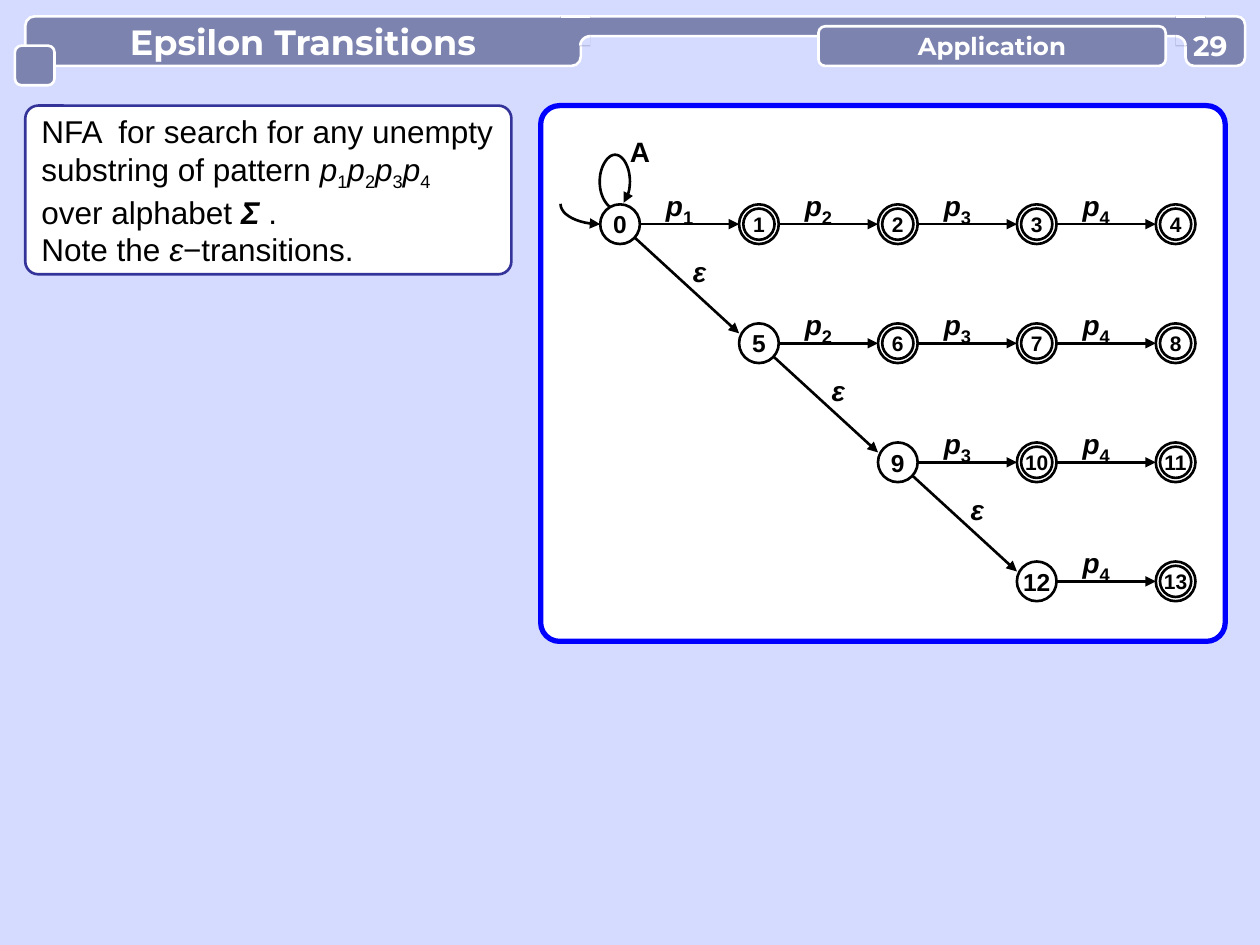
from typing import NamedTuple

from lxml.etree import SubElement
from pptx import Presentation
from pptx.dml.color import RGBColor as Rgb
from pptx.enum.shapes import MSO_CONNECTOR as Link, MSO_SHAPE as Kind
from pptx.enum.text import MSO_ANCHOR as Anchor, PP_ALIGN as Align
from pptx.oxml.ns import qn
from pptx.util import Cm, Pt

HUES = {"page": "D5DAFF", "bar": "7D83AF", "white": "FFFFFF", "black": "000000",
        "navy": "333399", "blue": "0000FF"}


class Run(NamedTuple):
    text: str
    bold: bool = False
    ital: bool = False
    sub: bool = False
    size: float | None = None


class Font(NamedTuple):
    name: str
    size: float
    hue: str
    bold: bool = True


class Box(NamedTuple):
    left: float
    top: float
    width: float
    height: float


class Point(NamedTuple):
    x: float
    y: float


HEAD = Font("Montserrat", 20, "white")
TAB = Font("Montserrat", 14, "white")
PAGE = Font("Montserrat", 16, "white")
BODY = Font("Arial", 18, "black", False)
MARK = Font("Arial", 16, "black")
STATE = Font("Arial", 14, "black")
FINAL = Font("Arial", 12, "black")

# State grid, in centimetres
ORIGIN = Point(12.5, 4.52)
STEP = Point(2.8, 2.4)
COUNT = 4
OUTER, INNER = 0.8, 0.63

deck = Presentation()
deck.slide_width, deck.slide_height = Cm(25.4), Cm(19.05)
slide = deck.slides.add_slide(deck.slide_layouts[6])
slide.background.fill.solid()
slide.background.fill.fore_color.rgb = Rgb.from_string(HUES["page"])
shapes = slide.shapes


def paint(shape, fill: str | None, line: str | None, width: float = 1.5) -> None:
    shape.shadow.inherit = False
    if fill:
        shape.fill.solid()
        shape.fill.fore_color.rgb = Rgb.from_string(HUES[fill])
    else:
        shape.fill.background()
    if line:
        shape.line.color.rgb = Rgb.from_string(HUES[line])
        shape.line.width = Pt(width)
    else:
        shape.line.fill.background()


def draw(kind: Kind, box: Box, fill: str | None, line: str | None = None,
         width: float = 1.5, curve: float | None = None):
    shape = shapes.add_shape(kind, *map(Cm, box))
    paint(shape, fill, line, width)
    if curve is not None:
        shape.adjustments[0] = curve
    return shape


def write(shape, lines: list[list[Run]], font: Font, align: Align = Align.CENTER,
          anchor: Anchor = Anchor.MIDDLE, tight: bool = False) -> None:
    frame = shape.text_frame
    frame.word_wrap = tight
    frame.vertical_anchor = anchor
    if tight:
        frame.margin_left = frame.margin_right = 0
        frame.margin_top = frame.margin_bottom = 0
    for i, runs in enumerate(lines):
        para = frame.add_paragraph() if i else frame.paragraphs[0]
        para.alignment = align
        para.font.name, para.font.size = font.name, Pt(font.size)
        para.font.bold = font.bold
        para.font.color.rgb = Rgb.from_string(HUES[font.hue])
        for part in runs:
            run = para.add_run()
            run.text = part.text
            if part.bold:
                run.font.bold = True
            if part.ital:
                run.font.italic = True
            if part.size:
                run.font.size = Pt(part.size)
            if part.sub:
                run.font._element.set("baseline", "-25000")


def link(start: Point, end: Point, hue: str = "black", arrow: bool = True) -> None:
    line = shapes.add_connector(Link.STRAIGHT, *map(Cm, (*start, *end)))
    line.line.color.rgb = Rgb.from_string(HUES[hue])
    line.line.width = Pt(1.5)
    if arrow:
        SubElement(line.line._get_or_add_ln(), qn("a:tailEnd"), type="triangle")
    SubElement(line._element.spPr, qn("a:effectLst"))


def bend(knots: list[Point], steps: int = 12) -> list[Point]:
    """Points along a chain of cubic curves."""
    path = [knots[0]]
    for i in range(0, len(knots) - 1, 3):
        a, b, c, d = knots[i:i + 4]
        for n in range(1, steps + 1):
            t = n / steps
            u = 1 - t
            path.append(Point(*(u**3 * p + 3 * u * u * t * q + 3 * u * t * t * r + t**3 * s
                                for p, q, r, s in zip(a, b, c, d))))
    return path


def trace(path: list[Point], fill: str | None, line: str | None, close: bool = False):
    pen = shapes.build_freeform(Cm(path[0].x), Cm(path[0].y))
    pen.add_line_segments([(Cm(p.x), Cm(p.y)) for p in path[1:]], close=close)
    shape = pen.convert_to_shape()
    paint(shape, fill, line)
    return shape


def hook(knots: list[Point]) -> None:
    """Curved arrow pointing at its first knot."""
    shape = trace(bend(knots), None, "black")
    SubElement(shape.line._get_or_add_ln(), qn("a:headEnd"), type="triangle")


def spot(col: int, row: int) -> Point:
    return Point(ORIGIN.x + col * STEP.x, ORIGIN.y + row * STEP.y)


def disc(mid: Point, size: float):
    return draw(Kind.OVAL, Box(mid.x - size / 2, mid.y - size / 2, size, size),
                "white", "black")


def mark(left: float, top: float, runs: list[Run], fill: str | None = "white") -> None:
    write(draw(Kind.RECTANGLE, Box(left, top, 0.8, 0.8), fill), [runs], MARK,
          anchor=Anchor.TOP, tight=True)


def joint(edge: float, tip: float, left: float) -> None:
    """Rounded inner corner between the thin bar and a tab."""
    top, low = 0.73, 0.92
    draw(Kind.RECTANGLE, Box(left, 0.33, 0.6, 0.6), "bar")
    link(Point(left, 0.33), Point(left + 0.6, 0.33), "white", False)
    mid = (edge + tip) / 2
    arc = bend([Point(edge, top), Point(mid, top), Point(tip, top + 0.08), Point(tip, low)])
    trace(arc + [Point(edge, low)], "page", None, True)
    trace(arc, None, "white")


# Explanation
pattern = [run for n in "1234" for run in (Run("p", ital=True), Run(n, sub=True))]
note = draw(Kind.ROUNDED_RECTANGLE, Box(0.51, 2.13, 9.8, 3.4), "white", "navy", curve=0.077)
write(note, [
    [Run("NFA  for search for any unempty")],
    [Run("substring of pattern "), *pattern],
    [Run("over alphabet "), Run("Σ ", bold=True, ital=True), Run(".")],
    [Run("Note the "), Run("ε", ital=True), Run("−transitions.")],
], BODY, Align.LEFT)

# Automaton panel with the start arrow and the loop
draw(Kind.ROUNDED_RECTANGLE, Box(10.9, 2.13, 13.8, 10.8), "white", "blue", 3, 0.035)
mark(12.5, 2.72, [Run("A")])
hook([Point(12.57, 4.09), Point(12.65, 3.99), Point(12.7, 3.84), Point(12.7, 3.66),
      Point(12.7, 3.38), Point(12.57, 3.12), Point(12.4, 3.12),
      Point(12.24, 3.12), Point(12.09, 3.38), Point(12.09, 3.66),
      Point(12.09, 3.96), Point(12.24, 4.19), Point(12.4, 4.22)])
hook([Point(12.1, 4.52), Point(11.67, 4.52), Point(11.3, 4.34), Point(11.3, 4.11)])

# Transitions
for row in range(COUNT):
    first = spot(row, row)
    if row < COUNT - 1:
        goal = spot(row + 1, row + 1)
        link(first, Point(goal.x - OUTER / 2, goal.y - 0.2))
        mark(first.x + 1.2, first.y + 0.61, [Run("ε", ital=True)], None)
    for col in range(row, COUNT):
        here, goal = spot(col, row), spot(col + 1, row)
        mark(here.x + 0.8, here.y - 0.79,
             [Run("p", ital=True), Run(str(col + 1), sub=True, size=18)])
        link(Point(here.x + OUTER / 2, here.y), Point(goal.x - OUTER / 2, goal.y))

# States, numbered row by row; all but the first of a row are final
cells = [(col, row) for row in range(COUNT) for col in range(row, COUNT + 1)]
for number, (col, row) in enumerate(cells):
    mid, final = spot(col, row), col > row
    ring = disc(mid, OUTER)
    if final:
        ring = disc(mid, INNER)
    write(ring, [[Run(str(number))]], FINAL if final else STATE)

# Header
title = draw(Kind.ROUNDED_RECTANGLE, Box(0.51, 0.33, 11.2, 1), "bar", "white", curve=0.188)
write(title, [[Run("Epsilon Transitions")]], HEAD)
draw(Kind.ROUNDED_RECTANGLE, Box(11.7, 0.33, 12.4, 0.4), "bar", "white", curve=0.5)
joint(11.9, 11.7, 11.3)
draw(Kind.ROUNDED_RECTANGLE, Box(0.3, 0.92, 0.8, 0.8), "bar", "white", curve=0.17)
draw(Kind.ROUNDED_RECTANGLE, Box(23.9, 0.33, 1.2, 1), "bar", "white", curve=0.17)
joint(23.7, 23.9, 23.7)
tab = draw(Kind.ROUNDED_RECTANGLE, Box(16.5, 0.53, 7, 0.8), "bar", "white", curve=0.17)
write(tab, [[Run("Application")]], TAB)
page = shapes.add_textbox(*map(Cm, (23.9, 0.57, 1.0, 0.68)))
write(page, [[Run("29")]], PAGE, tight=True)

deck.save("out.pptx")
